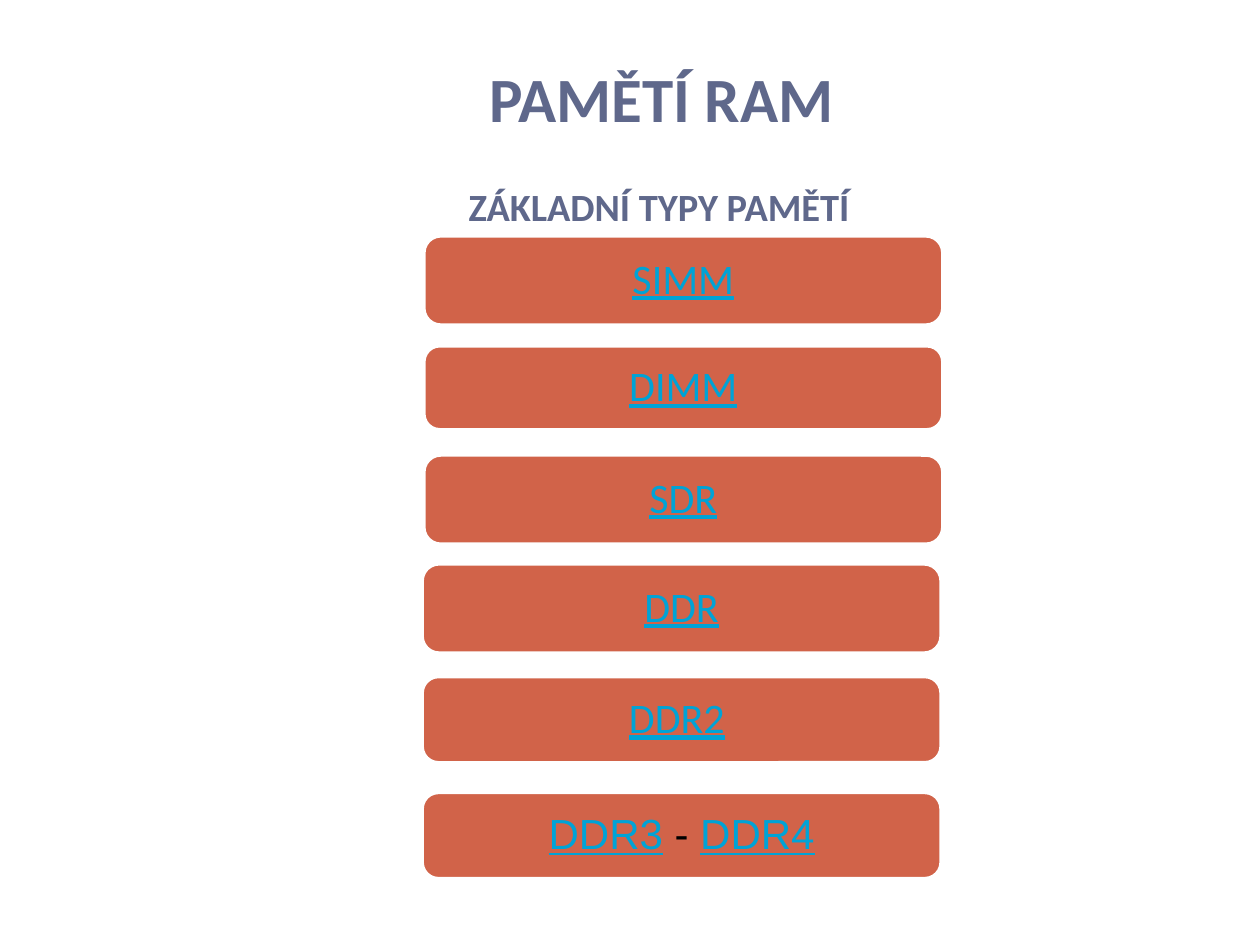
from dataclasses import dataclass

from pptx import Presentation
from pptx.dml.color import RGBColor
from pptx.enum.shapes import MSO_SHAPE
from pptx.enum.text import MSO_ANCHOR, MSO_AUTO_SIZE, PP_ALIGN
from pptx.util import Pt

ROUNDED = MSO_SHAPE.ROUNDED_RECTANGLE
CENTER = PP_ALIGN.CENTER
MIDDLE = MSO_ANCHOR.MIDDLE
BOTTOM = MSO_ANCHOR.BOTTOM
NO_FIT = MSO_AUTO_SIZE.NONE

TITLE_ONLY = 5
HEADING = "5F688B"
LINK = "00A3D6"
BRICK = "D16349"
WHITE = "FFFFFF"
BLACK = "000000"
BUTTON_WIDTH = 296.6


@dataclass
class Label:
    text: str
    color: str = LINK
    underline: bool = True


@dataclass
class Button:
    left: float
    top: float
    height: float
    labels: list[Label]
    font: str = "Calibri"


BUTTONS = [
    Button(242.2, 134.8, 51, [Label("SIMM")]),
    Button(242.2, 197.6, 48, [Label("DIMM")]),
    Button(242.2, 260, 51, [Label("SDR")]),
    Button(241.2, 322.2, 51, [Label("DDR")]),
    Button(241.2, 386.6, 49.3, [Label("DDR2"), Label(" ", WHITE, False)]),
    Button(241.2, 452.8, 49.3,
           [Label("DDR3"), Label(" - ", BLACK, False), Label("DDR4")], "Arial"),
]


def rgb(color: str) -> RGBColor:
    return RGBColor.from_string(color)


def place(box, left: float, top: float, width: float, height: float) -> None:
    box.left, box.top = Pt(left), Pt(top)
    box.width, box.height = Pt(width), Pt(height)


def write(para, text: str, *, size: float, color: str, font: str = "Calibri",
          bold: bool = False, underline: bool = False) -> None:
    para.alignment = CENTER
    span = para.add_run()
    span.text = text
    span.font.name = font
    span.font.size = Pt(size)
    span.font.bold = bold
    span.font.underline = underline
    span.font.color.rgb = rgb(color)


def draw_title(page) -> None:
    title = page.shapes.title
    place(title, 31, 31.7, 694, 49)
    frame = title.text_frame
    frame.auto_size = NO_FIT
    frame.vertical_anchor = BOTTOM
    para = frame.paragraphs[0]
    para.line_spacing = Pt(20)
    write(para, "PAMĚTÍ RAM", size=36, color=HEADING, bold=True)


def draw_subtitle(page) -> None:
    box = page.shapes.add_textbox(Pt(31), Pt(100.8), Pt(655.2), Pt(33.8))
    frame = box.text_frame
    frame.word_wrap = True
    frame.margin_left = Pt(43.2)
    write(frame.paragraphs[0], "ZÁKLADNÍ TYPY PAMĚTÍ", size=22, color=HEADING, bold=True)


def draw_button(page, button: Button) -> None:
    box = page.shapes.add_shape(ROUNDED, Pt(button.left), Pt(button.top),
                                Pt(BUTTON_WIDTH), Pt(button.height))
    box.shadow.inherit = False
    box.adjustments[0] = 0.19
    box.fill.solid()
    box.fill.fore_color.rgb = rgb(BRICK)
    box.line.color.rgb = rgb(WHITE)
    box.line.width = Pt(2)
    frame = box.text_frame
    frame.word_wrap = True
    frame.vertical_anchor = MIDDLE
    frame.margin_left = frame.margin_right = Pt(10)
    frame.margin_top = frame.margin_bottom = Pt(7.2)
    para = frame.paragraphs[0]
    para.line_spacing = 0.9
    for label in button.labels:
        write(para, label.text, size=24, color=label.color, font=button.font,
              underline=label.underline)


def main() -> None:
    deck = Presentation()
    deck.slide_width, deck.slide_height = Pt(720), Pt(540)
    page = deck.slides.add_slide(deck.slide_layouts[TITLE_ONLY])
    draw_title(page)
    draw_subtitle(page)
    for button in BUTTONS:
        draw_button(page, button)
    deck.save("out.pptx")


if __name__ == "__main__":
    main()
